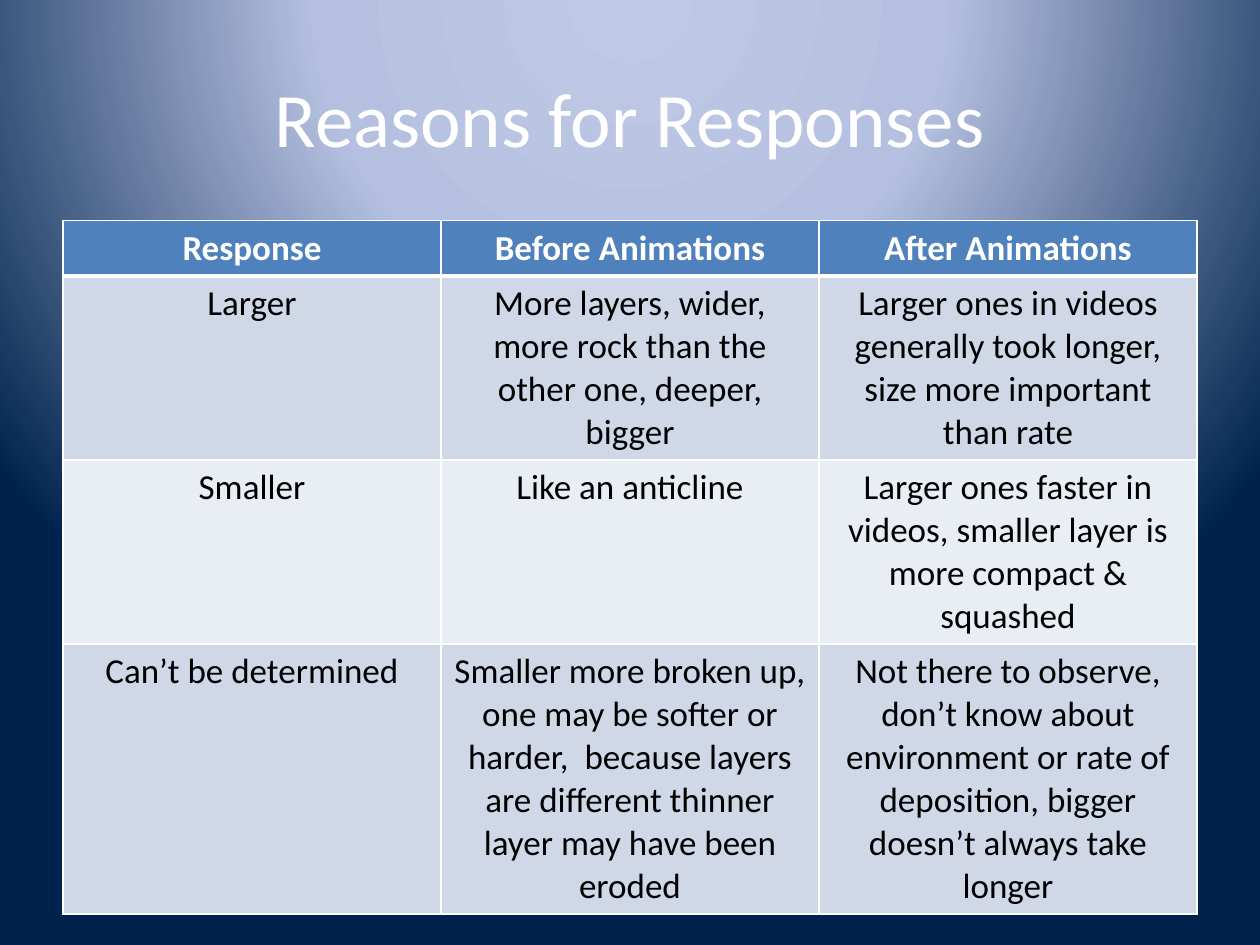
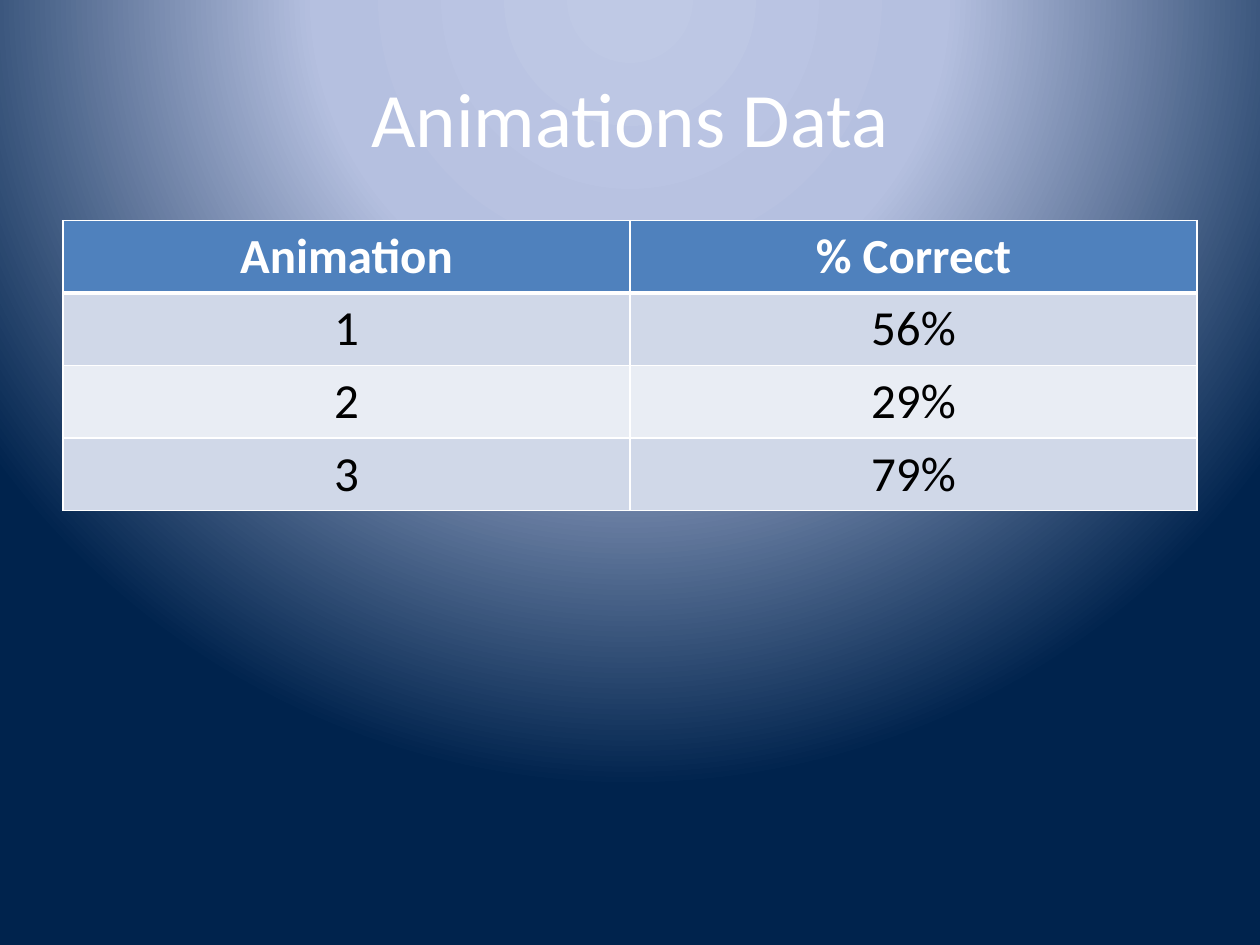
from dataclasses import dataclass

from lxml.etree import SubElement
from pptx import Presentation
from pptx.dml.color import RGBColor
from pptx.enum.text import MSO_ANCHOR, PP_ALIGN
from pptx.oxml.ns import qn
from pptx.util import Pt

# Shared look
FONT = "Calibri"
WHITE = RGBColor(0xFF, 0xFF, 0xFF)
BLACK = RGBColor(0x00, 0x00, 0x00)
HEAD = RGBColor(0x4F, 0x81, 0xBD)
BANDS = (RGBColor(0xE9, 0xED, 0xF4), RGBColor(0xD0, 0xD8, 0xE8))
GLOW = (
    (0, RGBColor(0xBF, 0xC9, 0xE5)),
    (40, RGBColor(0xB5, 0xC0, 0xE0)),
    (100, RGBColor(0x00, 0x23, 0x4D)),
)
FOCUS = {"l": 50, "t": -80, "r": 50, "b": 180}
LEFT, WIDTH = 36, 648
TITLE_TOP, TITLE_HIGH = 21.6, 90
GRID_TOP = 126
PAD = 7.2
THIN, THICK = 1, 3


@dataclass
class Page:
    title: str
    size: int
    lines: tuple[int, ...]  # text lines in each row
    rows: tuple[tuple[str, ...], ...]


PAGES = (
    Page("Reasons for Responses", 20, (1, 4, 4, 6), (
        ("Response", "Before Animations", "After Animations"),
        ("Larger",
         "More layers, wider, more rock than the other one, deeper, bigger",
         "Larger ones in videos generally took longer, size more important "
         "than rate"),
        ("Smaller",
         "Like an anticline",
         "Larger ones faster in videos, smaller layer is more compact & "
         "squashed"),
        ("Can’t be determined",
         "Smaller more broken up, one may be softer or harder,  because "
         "layers are different thinner layer may have been eroded",
         "Not there to observe, don’t know about environment or rate of "
         "deposition, bigger doesn’t always take longer"),
    )),
    Page("Animations Data", 28, (1, 1, 1, 1), (
        ("Animation", "% Correct"),
        ("1", "56%"),
        ("2", "29%"),
        ("3", "79%"),
    )),
)


def paint_back(master) -> None:
    """Give the master a round glow that every slide inherits."""
    master.background.fill.gradient()
    grad = master.element.find(".//" + qn("a:gradFill"))
    for part in list(grad):
        grad.remove(part)
    stops = SubElement(grad, qn("a:gsLst"))
    for spot, color in GLOW:
        stop = SubElement(stops, qn("a:gs"), pos=str(spot * 1000))
        SubElement(stop, qn("a:srgbClr"), val=str(color))
    ring = SubElement(grad, qn("a:path"), path="circle")
    SubElement(ring, qn("a:fillToRect"),
               {side: str(part * 1000) for side, part in FOCUS.items()})


def style_text(frame, size: int, color: RGBColor, bold: bool = False) -> None:
    for para in frame.paragraphs:
        para.alignment = PP_ALIGN.CENTER
        for run in para.runs:
            font = run.font
            font.name, font.size, font.bold = FONT, Pt(size), bold
            font.color.rgb = color


def add_edges(cell, top: int, base: int) -> None:
    props = cell._tc.get_or_add_tcPr()
    for side, width in zip("LRTB", (THIN, THIN, top, base)):
        line = SubElement(props, qn(f"a:ln{side}"), w=str(Pt(width)))
        fill = SubElement(line, qn("a:solidFill"))
        SubElement(fill, qn("a:srgbClr"), val=str(WHITE))


def add_title(slide, text: str) -> None:
    title = slide.shapes.title
    title.left, title.top = Pt(LEFT), Pt(TITLE_TOP)
    title.width, title.height = Pt(WIDTH), Pt(TITLE_HIGH)
    frame = title.text_frame
    frame.text = text
    frame.vertical_anchor = MSO_ANCHOR.MIDDLE
    style_text(frame, 44, WHITE)


def add_grid(slide, page: Page) -> None:
    highs = [count * page.size * 1.2 + PAD for count in page.lines]
    grid = slide.shapes.add_table(
        len(page.rows), len(page.rows[0]),
        Pt(LEFT), Pt(GRID_TOP), Pt(WIDTH), Pt(sum(highs))).table
    for row, high in zip(grid.rows, highs):
        row.height = Pt(high)
    for r, texts in enumerate(page.rows):
        top = THICK if r == 1 else THIN
        base = THICK if r == 0 else THIN
        for c, text in enumerate(texts):
            cell = grid.cell(r, c)
            add_edges(cell, top, base)
            cell.fill.solid()
            cell.fill.fore_color.rgb = BANDS[r % 2] if r else HEAD
            cell.text_frame.text = text
            style_text(cell.text_frame, page.size,
                       BLACK if r else WHITE, bold=r == 0)


def main() -> None:
    deck = Presentation()
    deck.slide_width, deck.slide_height = Pt(720), Pt(540)
    paint_back(deck.slide_master)
    for page in PAGES:
        slide = deck.slides.add_slide(deck.slide_layouts[5])
        add_title(slide, page.title)
        add_grid(slide, page)
    deck.save("out.pptx")


if __name__ == "__main__":
    main()
